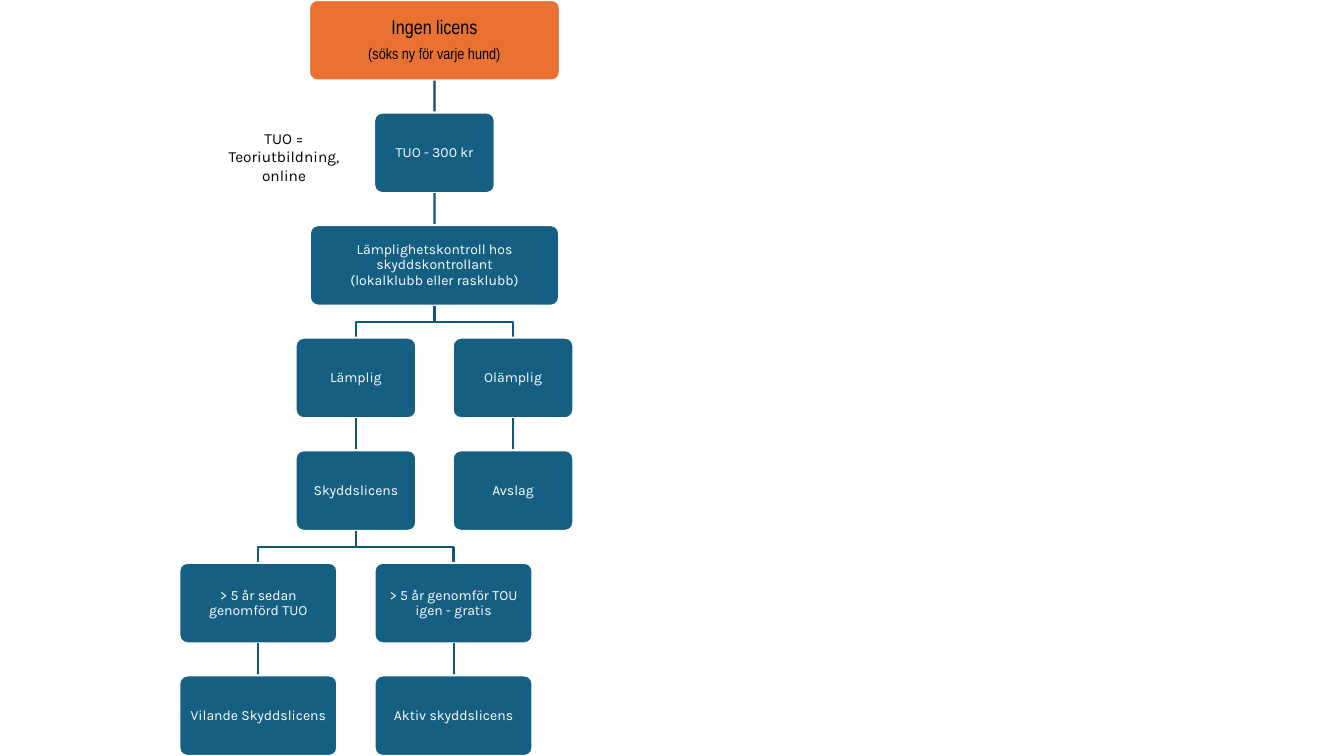
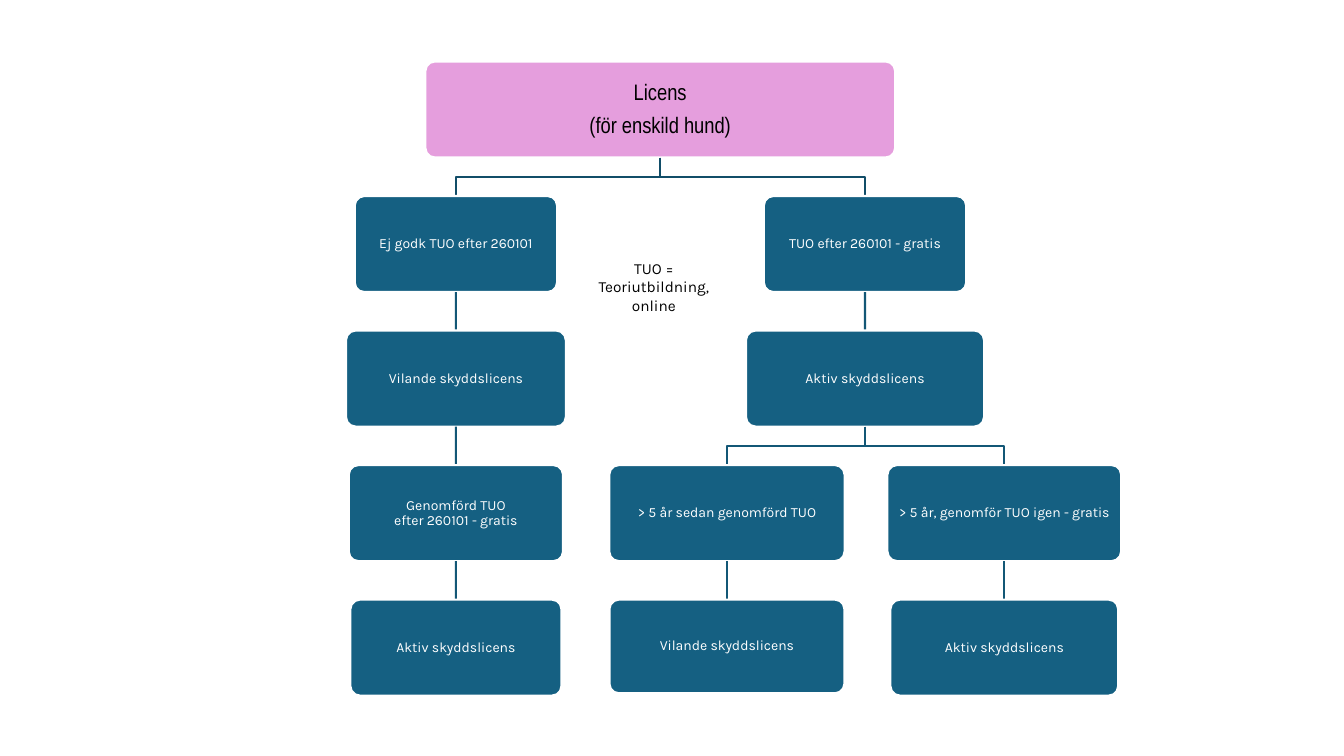
from dataclasses import dataclass
from typing import Any

from lxml.etree import SubElement
from pptx import Presentation
from pptx.dml.color import RGBColor
from pptx.enum.shapes import MSO_CONNECTOR, MSO_SHAPE
from pptx.enum.text import MSO_ANCHOR, PP_ALIGN
from pptx.oxml.ns import qn
from pptx.util import Cm, Pt


@dataclass(frozen=True)
class Theme:
    blue: str = "156082"
    orange: str = "E97132"
    pink: str = "E59EDD"
    white: str = "FFFFFF"
    black: str = "000000"
    link: str = "135776"
    root_link: str = "114D68"
    body_font: str = "Karla"
    root_font: str = "Arial Narrow"
    body_size: float = 10
    note_size: float = 11
    line_width: float = 1.5


@dataclass(frozen=True)
class Grid:
    top: float
    pitch: float
    box_height: float


@dataclass(frozen=True)
class Node:
    shape: Any
    centre: float
    row: int


THEME = Theme()
BOTTOM, TOP = 2, 0
SLIDE_WIDTH, SLIDE_HEIGHT = 33.87, 19.05


def write_text(frame, text, font=THEME.body_font, sizes=(THEME.body_size,),
               colour=THEME.white, spacing=0.9, space_after=0.4):
    frame.word_wrap = True
    for index, size in enumerate(sizes):
        paragraph = frame.paragraphs[0] if index == 0 else frame.add_paragraph()
        paragraph.alignment = PP_ALIGN.CENTER
        paragraph.line_spacing = spacing
        paragraph.space_after = Pt(space_after * size)
        content = text.split("\n")[index] if len(sizes) > 1 else text
        for number, line in enumerate(content.split("\n")):
            if number:
                paragraph.add_line_break()
            run = paragraph.add_run()
            run.text = line
            run.font.name = font
            run.font.size = Pt(size)
            run.font.color.rgb = RGBColor.from_string(colour)


class FlowChart:
    def __init__(self, presentation, grid, theme=THEME):
        self.slide = presentation.slides.add_slide(presentation.slide_layouts[6])
        self.grid = grid
        self.theme = theme

    def row_top(self, row):
        return self.grid.top + row * self.grid.pitch

    def style_line(self, line, colour):
        line.color.rgb = RGBColor.from_string(colour)
        line.width = Pt(self.theme.line_width)

    def box(self, text, centre, row, width, height=None, fill=THEME.blue,
            inset=0.1, **text_format):
        shape = self.slide.shapes.add_shape(
            MSO_SHAPE.ROUNDED_RECTANGLE, Cm(centre - width / 2),
            Cm(self.row_top(row)), Cm(width), Cm(height or self.grid.box_height))
        shape.adjustments[0] = 0.1
        shape.shadow.inherit = False
        shape.fill.solid()
        shape.fill.fore_color.rgb = RGBColor.from_string(fill)
        self.style_line(shape.line, self.theme.white)
        frame = shape.text_frame
        frame.vertical_anchor = MSO_ANCHOR.MIDDLE
        frame.margin_left = frame.margin_right = Cm(inset)
        frame.margin_top = frame.margin_bottom = Cm(inset)
        write_text(frame, text, **text_format)
        return Node(shape, centre, row)

    def root(self, text, centre, width, fill, sizes):
        return self.box(text, centre, 0, width, fill=fill, inset=0.16, sizes=sizes,
                        font=self.theme.root_font, colour=self.theme.black)

    def child(self, parent, text, width, centre=None, height=None):
        row = parent.row + 1
        colour = self.theme.link if parent.row else self.theme.root_link
        if centre is None:
            connector = self.straight_link(parent, row, colour)
            node = self.box(text, parent.centre, row, width, height)
            connector.end_connect(node.shape, TOP)
            return node
        self.branch_link(parent, centre, row, colour)
        return self.box(text, centre, row, width, height)

    def straight_link(self, parent, row, colour):
        start = parent.shape.top + parent.shape.height
        connector = self.slide.shapes.add_connector(
            MSO_CONNECTOR.STRAIGHT, Cm(parent.centre), start,
            Cm(parent.centre), Cm(self.row_top(row)))
        connector.begin_connect(parent.shape, BOTTOM)
        self.style_line(connector.line, colour)
        SubElement(connector._element.spPr, qn("a:effectLst"))
        return connector

    def branch_link(self, parent, centre, row, colour):
        start = parent.shape.top + parent.shape.height
        end = Cm(self.row_top(row))
        middle = (start + end) // 2
        builder = self.slide.shapes.build_freeform(Cm(parent.centre), start)
        builder.add_line_segments(
            [(Cm(parent.centre), middle), (Cm(centre), middle), (Cm(centre), end)],
            close=False)
        shape = builder.convert_to_shape()
        shape.shadow.inherit = False
        shape.fill.background()
        self.style_line(shape.line, colour)

    def note(self, text, left, top):
        shape = self.slide.shapes.add_textbox(Cm(left), Cm(top), Cm(3.4), Cm(1.68))
        write_text(shape.text_frame, text, sizes=(self.theme.note_size,),
                   colour=self.theme.black, spacing=1.0, space_after=0)


NOTE = "TUO = Teoriutbildning, online"


def build_without_licence(presentation):
    box_height, rows = 2.03, 7
    pitch = (SLIDE_HEIGHT - box_height) / (rows - 1)
    chart = FlowChart(presentation, Grid(0, pitch, box_height))
    narrow, medium = 3.04, 3.98
    root = chart.root("Ingen licens\n(söks ny för varje hund)", 10.95, 6.32,
                      THEME.orange, (14, 11))
    course = chart.child(root, "TUO - 300 kr", narrow)
    check = chart.child(course, "Lämplighetskontroll hos skyddskontrollant\n"
                                "(lokalklubb eller rasklubb)", 6.28)
    suitable = chart.child(check, "Lämplig", narrow, centre=8.97)
    licence = chart.child(suitable, "Skyddslicens", narrow)
    for condition, result, centre in (
            ("> 5 år sedan genomförd TUO", "Vilande Skyddslicens", 6.51),
            ("> 5 år genomför TOU igen - gratis", "Aktiv skyddslicens", 11.43)):
        chart.child(chart.child(licence, condition, medium, centre), result, medium)
    unsuitable = chart.child(check, "Olämplig", narrow, centre=12.93)
    chart.child(unsuitable, "Avslag", narrow)
    chart.note(NOTE, 5.46, 3.12)


def build_with_licence(presentation):
    chart = FlowChart(presentation, Grid(1.55, 3.39, 2.42))
    dormant, active = "Vilande skyddslicens", "Aktiv skyddslicens"
    root = chart.root("Licens\n(för enskild hund)", 16.64, 11.84, THEME.pink, (16, 16))
    node = chart.child(root, "Ej godk TUO efter 260101", 5.1, centre=11.49)
    for text, width in ((dormant, 5.54),
                        ("Genomförd TUO\nefter 260101 - gratis", 5.4),
                        (active, 5.32)):
        node = chart.child(node, text, width)
    approved = chart.child(root, "TUO efter 260101 - gratis", 5.1, centre=21.8)
    licence = chart.child(approved, active, 6)
    expired = chart.child(licence, "> 5 år sedan genomförd TUO", 5.93, centre=18.32)
    chart.child(expired, dormant, 5.92, height=2.36)
    renewed = chart.child(licence, "> 5 år, genomför TUO igen - gratis", 5.89,
                          centre=25.31)
    chart.child(renewed, active, 5.74)
    chart.note(NOTE, 14.78, 6.4)


def main():
    presentation = Presentation()
    presentation.slide_width = Cm(SLIDE_WIDTH)
    presentation.slide_height = Cm(SLIDE_HEIGHT)
    build_without_licence(presentation)
    build_with_licence(presentation)
    presentation.save("out.pptx")


if __name__ == "__main__":
    main()
